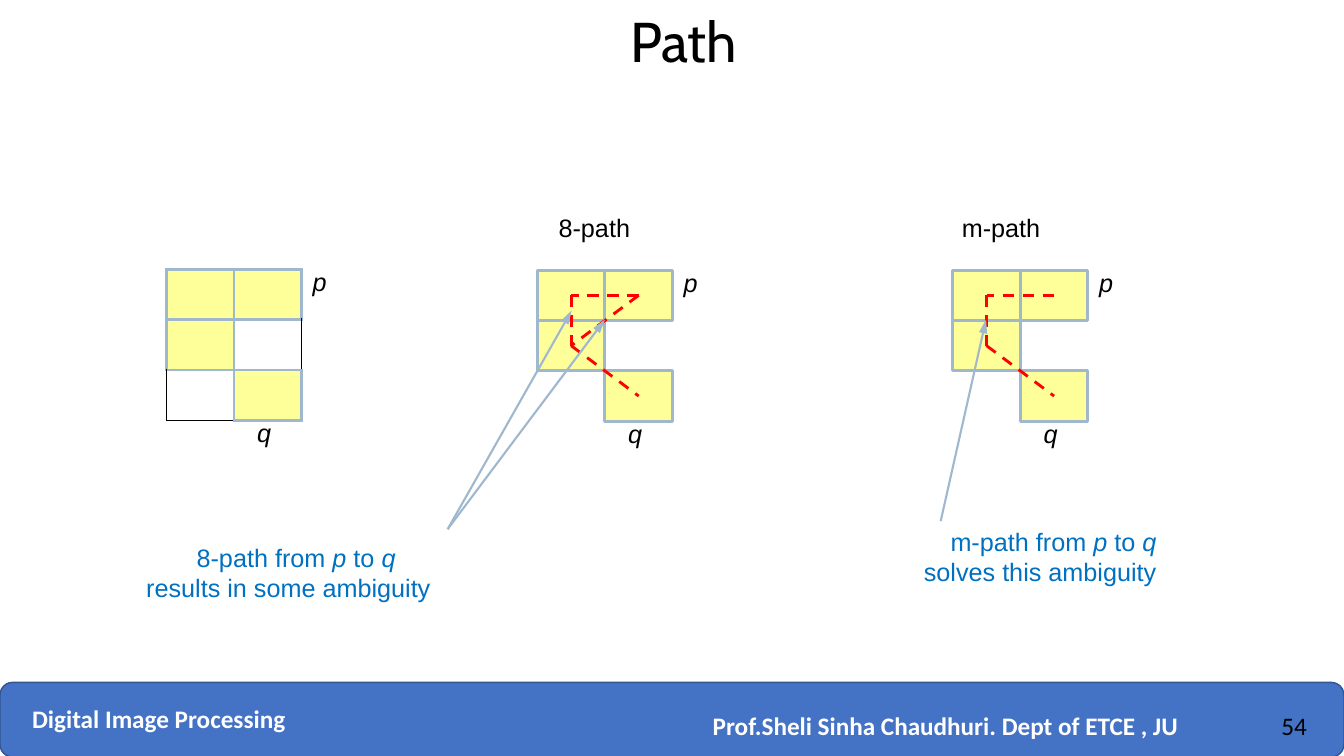
from lxml import etree
from pptx import Presentation
from pptx.dml.color import RGBColor
from pptx.enum.dml import MSO_LINE
from pptx.enum.shapes import MSO_CONNECTOR as Conn, MSO_SHAPE as Shape
from pptx.enum.text import MSO_ANCHOR as Anchor, MSO_AUTO_SIZE as Auto, PP_ALIGN as Align
from pptx.oxml import parse_xml
from pptx.oxml.ns import nsdecls, qn
from pptx.util import Inches, Pt

BLACK = RGBColor(0, 0, 0)
WHITE = RGBColor(255, 255, 255)
BLUE = RGBColor(0x44, 0x72, 0xC4)
NAVY = RGBColor(0x32, 0x54, 0x91)
SKY = RGBColor(0x00, 0x70, 0xC0)
STEEL = RGBColor(0x9F, 0xB8, 0xCD)
YELLOW = RGBColor(0xFF, 0xFF, 0x99)
RED = RGBColor(255, 0, 0)

TITLE = "Path"
FOOTER = [
    ("Digital Image Processing", (0.22, 6.93, 2.73, 0.4), WHITE, True),
    ("Prof.Sheli Sinha Chaudhuri. Dept of ETCE , JU", (6.97, 7, 4.92, 0.4), WHITE, True),
    ("54", (12.61, 7, 0.5, 0.4), BLACK, False),
]
CELLS = ["##", "#.", ".#"]
CELL_W, CELL_H = 0.67, 0.5
TABLE = (1.65, 2.67)
GRIDS = [
    ((5.33, 2.68), [((1, 0), (0, 0)), ((0, 0), (0, 1)), ((0, 1), (1, 2)), ((1, 0), (0, 1))]),
    ((9.45, 2.68), [((1, 0), (0, 0)), ((0, 0), (0, 1)), ((0, 1), (1, 2))]),
]
MARKS = [("p", 1.45, -0.05), ("q", 0.9, 1.45)]
HEADS = [("8-path", (5.54, 2.09, 0.98, 0.31)), ("m-path", (9.54, 2.09, 1.07, 0.31))]
NOTES = [
    ((1.45, 5.36, 3.79, 0.61), Align.LEFT, 0.5,
     [["8-path from ", "p", " to ", "q"], ["results in some ambiguity"]]),
    ((8.34, 5.2, 3.13, 0.61), Align.RIGHT, 0,
     [["m-path from ", "p", " to ", "q"], ["solves this ambiguity"]]),
]
ARROWS = [
    ((4.44, 5.25), (5.67, 3.08)),
    ((4.44, 5.25), (6, 3.17)),
    ((9.33, 5.17), (9.78, 3.17)),
]

BODY = {"name": "Arial", "size": Pt(18)}
FRAME = {"margin_left": 0, "margin_right": 0, "margin_top": Inches(0.02),
         "margin_bottom": 0, "word_wrap": True, "auto_size": Auto.NONE,
         "vertical_anchor": Anchor.TOP}


def apply(item, form):
    """Set each named value on the item."""
    for key, value in form.items():
        setattr(item, key, value)


def spread(rect):
    """Turn inch values into lengths."""
    return [Inches(value) for value in rect]


def write(para, words, color, form):
    """Add the words as runs, with p and q in italics."""
    for word in words:
        run = para.add_run()
        run.text = word
        apply(run.font, {**form, "italic": word in ("p", "q")})
        run.font.color.rgb = color


def label(slide, rect, paras, color=BLACK, align=Align.LEFT, indent=0):
    """Place a text box whose first line may be indented."""
    frame = slide.shapes.add_textbox(*spread(rect)).text_frame
    apply(frame, FRAME)
    for num, words in enumerate(paras):
        para = frame.add_paragraph() if num else frame.paragraphs[0]
        para.alignment = align
        if indent and not num:
            para._p.get_or_add_pPr().set("marL", str(Inches(indent)))
        write(para, words, color, BODY)


def outline(shape, color, width):
    """Give the shape a plain line and no shadow."""
    shape.shadow.inherit = False
    shape.line.color.rgb = color
    shape.line.width = Pt(width)


def block(slide, kind, rect, fill, color, width):
    """Draw a filled preset shape."""
    shape = slide.shapes.add_shape(kind, *spread(rect))
    shape.fill.solid()
    shape.fill.fore_color.rgb = fill
    outline(shape, color, width)
    return shape


def footer(slide):
    """Draw the bar and its texts."""
    bar = block(slide, Shape.ROUNDED_RECTANGLE, (0, 6.77, 13.33, 0.74), BLUE, NAVY, 1)
    bar.adjustments[0] = 0.17
    for text, rect, color, bold in FOOTER:
        frame = slide.shapes.add_textbox(*spread(rect)).text_frame
        frame.word_wrap = False
        write(frame.paragraphs[0], [text], color,
              {"name": "Calibri", "size": Pt(18), "bold": bold})


def border(cell, side, color, width):
    """Add one cell border."""
    cell._tc.get_or_add_tcPr().append(parse_xml(
        f'<a:ln{side} {nsdecls("a")} w="{Pt(width)}"><a:solidFill>'
        f'<a:srgbClr val="{color}"/></a:solidFill></a:ln{side}>'))


def matrix(slide):
    """Draw the pixel table."""
    rows, cols = len(CELLS), len(CELLS[0])
    rect = (*TABLE, cols * CELL_W, rows * CELL_H)
    table = slide.shapes.add_table(rows, cols, *spread(rect)).table
    for row, line in enumerate(CELLS):
        for col, mark in enumerate(line):
            cell = table.cell(row, col)
            edges = {"L": col == 0, "R": col == cols - 1,
                     "T": row == 0, "B": row == rows - 1}
            for side, outer in edges.items():
                thin = outer and mark == "."
                border(cell, side, *((BLACK, 1) if thin else (STEEL, 2.21)))
            cell.fill.solid()
            cell.fill.fore_color.rgb = YELLOW if mark == "#" else WHITE


def grid(slide, left, top):
    """Draw the marked cells as boxes."""
    for row, line in enumerate(CELLS):
        for col, mark in enumerate(line):
            if mark == "#":
                rect = (left + col * CELL_W, top + row * CELL_H, CELL_W, CELL_H)
                block(slide, Shape.RECTANGLE, rect, YELLOW, STEEL, 2.04)


def route(slide, left, top, steps):
    """Join cell centres with dashed lines."""
    def centre(spot):
        return spread((left + (spot[0] + 0.5) * CELL_W, top + (spot[1] + 0.5) * CELL_H))

    pen = slide.shapes.build_freeform(*centre(steps[0][0]))
    for num, (start, end) in enumerate(steps):
        if num:
            pen.move_to(*centre(start))
        pen.add_line_segments([centre(end)], close=False)
    shape = pen.convert_to_shape()
    shape.fill.background()
    outline(shape, RED, 2.04)
    shape.line.dash_style = MSO_LINE.DASH


def arrow(slide, start, end):
    """Draw a pointer with a head at its end."""
    link = slide.shapes.add_connector(Conn.STRAIGHT, *spread((*start, *end)))
    link.line.color.rgb = STEEL
    link.line.width = Pt(1.5)
    etree.SubElement(link.line._get_or_add_ln(), qn("a:tailEnd"),
                     type="triangle", w="med", len="lg")
    etree.SubElement(link._element.spPr, qn("a:effectLst"))


def main():
    """Build the slide and save it."""
    deck = Presentation()
    deck.slide_width, deck.slide_height = spread((13.33, 7.5))
    slide = deck.slides.add_slide(deck.slide_layouts[5])
    footer(slide)
    title = slide.shapes.title
    apply(title, dict(zip(("left", "top", "width", "height"), spread((0.88, 0.04, 11.8, 0.96)))))
    apply(title.text_frame, FRAME)
    head = title.text_frame.paragraphs[0]
    head.alignment = Align.CENTER
    write(head, [TITLE], BLACK, {"name": "Cabin", "size": Pt(40)})
    matrix(slide)
    for (left, top), steps in GRIDS:
        grid(slide, left, top)
        route(slide, left, top, steps)
    for left, top in [TABLE] + [spot for spot, steps in GRIDS]:
        for text, right, down in MARKS:
            label(slide, (left + right, top + down, 0.22, 0.31), [[text]])
    for start, end in ARROWS:
        arrow(slide, start, end)
    for rect, align, indent, paras in NOTES:
        label(slide, rect, paras, SKY, align, indent)
    for text, rect in HEADS:
        label(slide, rect, [[text]])
    deck.save("out.pptx")


if __name__ == "__main__":
    main()
